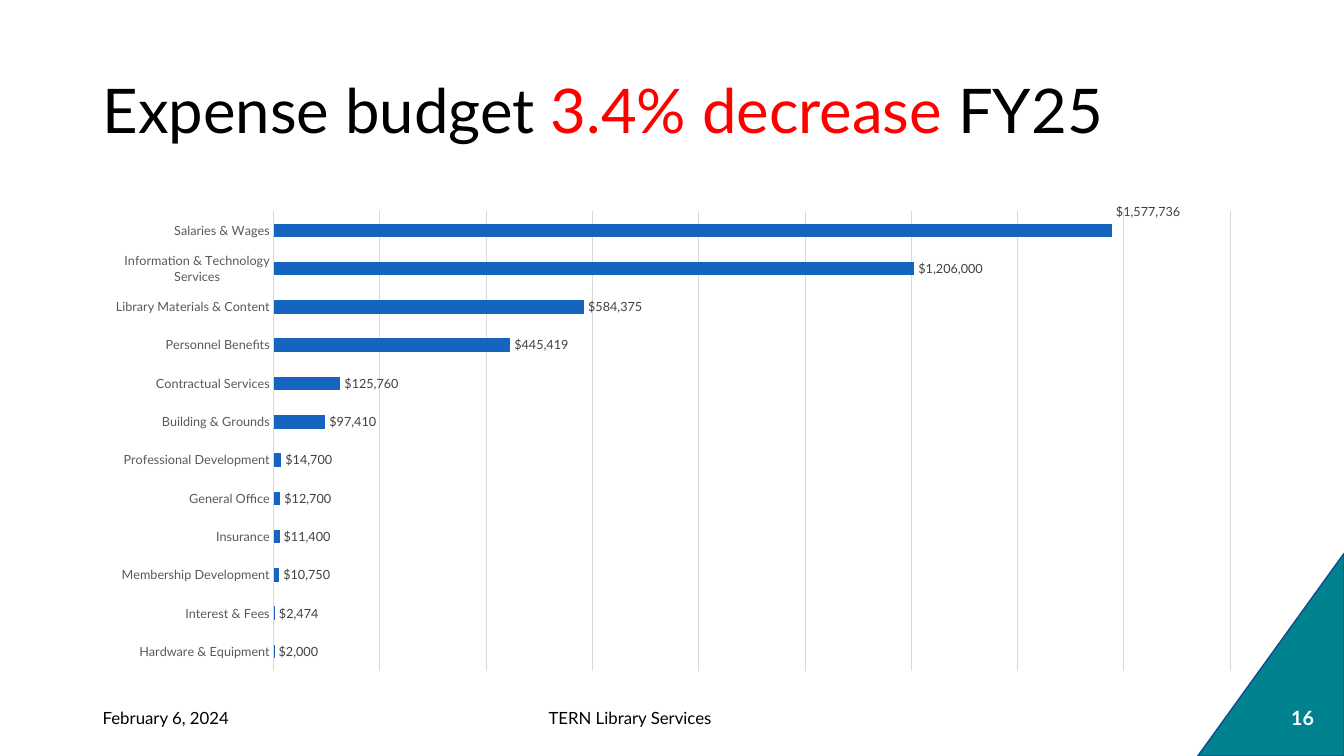
from lxml import etree
from pptx import Presentation
from pptx import util as u
from pptx.chart import data as chart_data
from pptx.dml.color import RGBColor
from pptx.enum import chart as charts, shapes, text
from pptx.oxml import ns

BLACK = RGBColor(0x00, 0x00, 0x00)
WHITE = RGBColor(0xFF, 0xFF, 0xFF)
RED = RGBColor(0xFF, 0x00, 0x00)
TEAL = RGBColor(0x00, 0x83, 0x8E)
NAVY = RGBColor(0x10, 0x4B, 0x8E)
BLUE = RGBColor(0x15, 0x65, 0xC0)
GRID_GREY = RGBColor(0xD9, 0xD9, 0xD9)
AXIS_GREY = RGBColor(0x59, 0x59, 0x59)
LABEL_GREY = RGBColor(0x40, 0x40, 0x40)

FONT = "Lato"
DOLLARS = '"$"#,##0'
WIDTH, HEIGHT = 13.33, 7.5
MARGIN, CONTENT_WIDTH = 0.92, 11.5

EXPENSES = [
    ("Hardware & Equipment", 2000),
    ("Interest & Fees", 2474),
    ("Membership Development", 10750),
    ("Insurance", 11400),
    ("General Office", 12700),
    ("Professional Development", 14700),
    ("Building & Grounds", 97410),
    ("Contractual Services", 125760),
    ("Personnel Benefits", 445419),
    ("Library Materials & Content", 584375),
    ("Information & Technology Services", 1206000),
    ("Salaries & Wages", 1577736),
]


def style_font(font, size, color, bold=False):
    font.name = FONT
    font.size = u.Pt(size)
    font.bold = bold
    font.color.rgb = color


def add_text(slide, box, runs, size, align=text.PP_ALIGN.LEFT, bold=False):
    frame = slide.shapes.add_textbox(*map(u.Inches, box)).text_frame
    frame.word_wrap = True
    frame.vertical_anchor = text.MSO_ANCHOR.MIDDLE
    paragraph = frame.paragraphs[0]
    paragraph.alignment = align
    for words, color in runs:
        run = paragraph.add_run()
        run.text = words
        style_font(run.font, size, color, bold)
    return paragraph


def add_title(slide, box):
    runs = [("Expense budget ", BLACK), ("3.4% decrease ", RED), ("FY25", BLACK)]
    add_text(slide, box, runs, 44).line_spacing = 0.9


def add_corner(slide, box):
    left, top, width, height = box
    shift = (height - width) / 2
    turned_box = (left - shift, top + shift, height, width)
    triangle = slide.shapes.add_shape(
        shapes.MSO_SHAPE.RIGHT_TRIANGLE, *map(u.Inches, turned_box))
    triangle.rotation = 270
    triangle.shadow.inherit = False
    triangle.fill.solid()
    triangle.fill.fore_color.rgb = TEAL
    triangle.line.color.rgb = NAVY
    triangle.line.width = u.Pt(1)


def add_footer(slide, box):
    left, top, width, height = box
    center = text.PP_ALIGN.CENTER
    add_text(slide, (left, top, 3, height), [("February 6, 2024", BLACK)], 12)
    add_text(slide, (4, top, 4.5, height),
             [("TERN Library Services", BLACK)], 12, center)
    add_text(slide, (left + width - 0.58, top, 0.58, height),
             [("16", WHITE)], 14, center, True)


def manual_layout(**settings):
    layout = etree.Element(ns.qn("c:layout"))
    manual = etree.SubElement(layout, ns.qn("c:manualLayout"))
    for tag, value in settings.items():
        etree.SubElement(manual, ns.qn("c:" + tag)).set("val", str(value))
    return layout


def set_plot_layout(chart):
    plot_area = chart.plots[0]._element.getparent()
    for layout in plot_area.findall(ns.qn("c:layout")):
        plot_area.remove(layout)
    plot_area.insert(0, manual_layout(
        layoutTarget="inner", xMode="edge", yMode="edge",
        x=0.156, y=0.02, w=0.825, h=0.958))


def raise_label(point):
    label = point.data_label
    style_font(label.font, 9, LABEL_GREY)
    label.position = charts.XL_LABEL_POSITION.OUTSIDE_END
    element = label._dLbl
    element.insert(1, manual_layout(x=0, y=-0.038))
    number_format = etree.Element(ns.qn("c:numFmt"))
    number_format.set("formatCode", DOLLARS)
    number_format.set("sourceLinked", "0")
    element.insert(2, number_format)


def add_expense_chart(slide, box):
    budget = chart_data.CategoryChartData(number_format=DOLLARS)
    names, amounts = zip(*EXPENSES)
    budget.categories = names
    budget.add_series("Series 1", amounts)
    chart = slide.shapes.add_chart(
        charts.XL_CHART_TYPE.BAR_CLUSTERED, *map(u.Inches, box), budget).chart
    style_font(chart.font, 10, BLACK)
    chart.has_title = False
    chart.has_legend = False

    categories = chart.category_axis
    categories.major_tick_mark = charts.XL_TICK_MARK.NONE
    categories.has_major_gridlines = False
    style_font(categories.tick_labels.font, 9, AXIS_GREY)
    values = chart.value_axis
    values.visible = False
    values.minimum_scale, values.maximum_scale = 0, 1800000
    values.major_unit = 200000
    values.has_major_gridlines = True
    values.tick_labels.number_format = DOLLARS
    values.tick_labels.number_format_is_linked = False
    for line in (categories.format.line, values.major_gridlines.format.line):
        line.color.rgb = GRID_GREY
        line.width = u.Pt(0.75)

    plot = chart.plots[0]
    plot.gap_width = 182
    plot.vary_by_categories = False
    series = plot.series[0]
    series.invert_if_negative = False
    series.format.fill.solid()
    series.format.fill.fore_color.rgb = BLUE
    labels = series.data_labels
    labels.show_value = True
    labels.position = charts.XL_LABEL_POSITION.OUTSIDE_END
    labels.number_format = DOLLARS
    labels.number_format_is_linked = False
    style_font(labels.font, 9, LABEL_GREY)
    raise_label(series.points[len(EXPENSES) - 1])
    set_plot_layout(chart)


def main():
    presentation = Presentation()
    presentation.slide_width = u.Inches(WIDTH)
    presentation.slide_height = u.Inches(HEIGHT)
    slide = presentation.slides.add_slide(presentation.slide_layouts[6])
    add_corner(slide, (WIDTH - 1.45, HEIGHT - 2.01, 1.45, 2.01))
    add_title(slide, (MARGIN, 0.4, CONTENT_WIDTH, 1.45))
    add_expense_chart(slide, (MARGIN, 2, CONTENT_WIDTH, 4.76))
    add_footer(slide, (MARGIN, 6.92, 12.29, 0.4))
    presentation.save("out.pptx")


if __name__ == "__main__":
    main()
